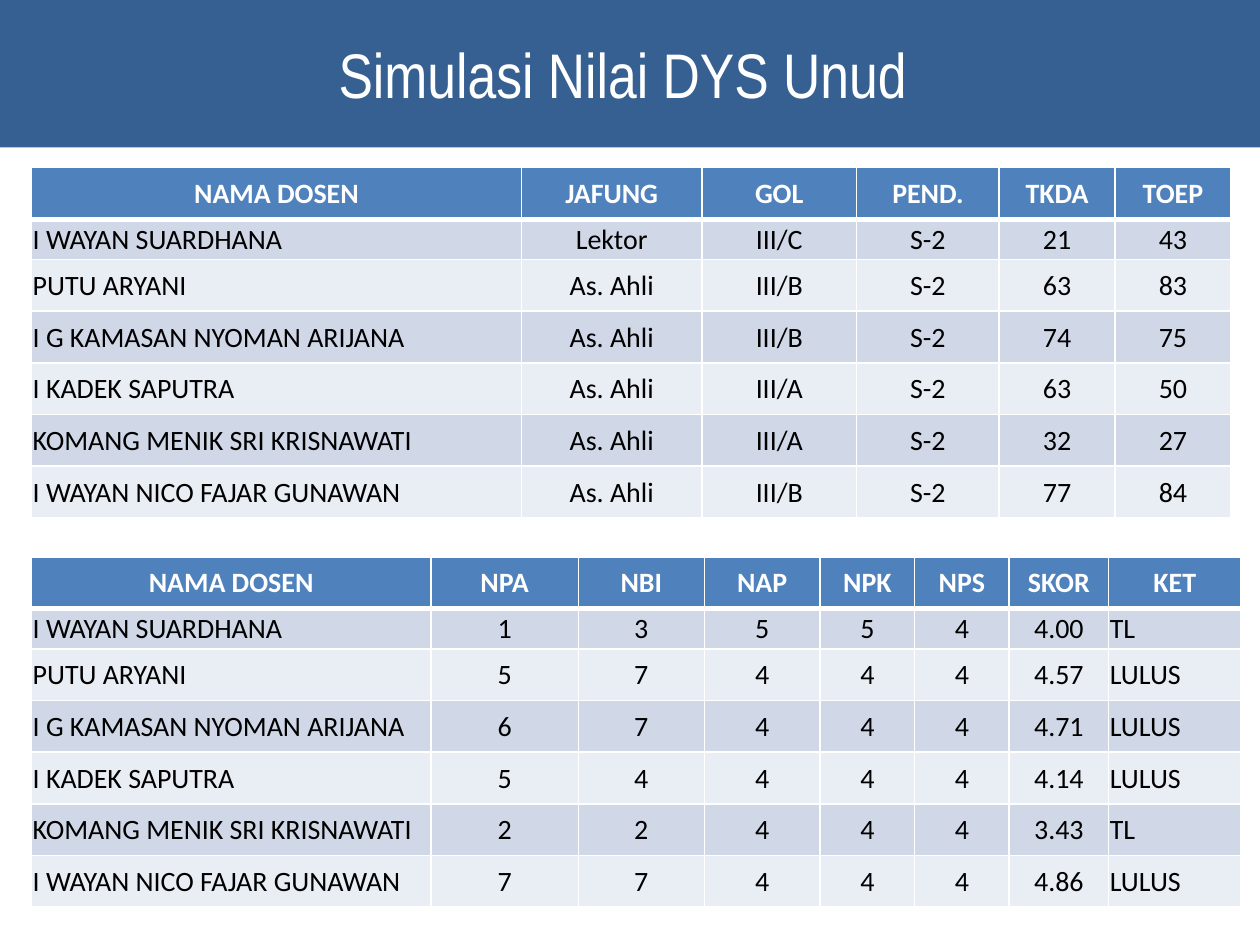
from dataclasses import dataclass

from lxml.etree import SubElement
from pptx import Presentation
from pptx.dml.color import RGBColor as Rgb
from pptx.enum.shapes import MSO_SHAPE as Shape
from pptx.enum.text import MSO_ANCHOR as Anchor, PP_ALIGN as Align
from pptx.oxml.ns import qn
from pptx.util import Inches, Pt

# Content
TITLE = "Simulasi Nilai DYS Unud "
LECTURERS = [
    "I WAYAN SUARDHANA",
    "PUTU ARYANI",
    "I G KAMASAN NYOMAN ARIJANA",
    "I KADEK SAPUTRA",
    "KOMANG MENIK SRI KRISNAWATI",
    "I WAYAN NICO FAJAR GUNAWAN",
]
PROFILE = {
    "top": 1.33,
    "columns": [("NAMA DOSEN", 3.89), ("JAFUNG", 1.43), ("GOL", 1.23),
                ("PEND.", 1.13), ("TKDA", 0.92), ("TOEP", 0.92)],
    "left_aligned": {"NAMA DOSEN"},
    "rows": [
        ("Lektor", "III/C", "S-2", "21", "43"),
        ("As. Ahli", "III/B", "S-2", "63", "83"),
        ("As. Ahli", "III/B", "S-2", "74", "75"),
        ("As. Ahli", "III/A", "S-2", "63", "50"),
        ("As. Ahli", "III/A", "S-2", "32", "27"),
        ("As. Ahli", "III/B", "S-2", "77", "84"),
    ],
}
SCORES = {
    "top": 4.42,
    "columns": [("NAMA DOSEN", 3.17), ("NPA", 1.17), ("NBI", 1), ("NAP", 0.92),
                ("NPK", 0.75), ("NPS", 0.75), ("SKOR", 0.79), ("KET", 1.05)],
    "left_aligned": {"NAMA DOSEN", "KET"},
    "rows": [
        ("1", "3", "5", "5", "4", "4.00", "TL"),
        ("5", "7", "4", "4", "4", "4.57", "LULUS"),
        ("6", "7", "4", "4", "4", "4.71", "LULUS"),
        ("5", "4", "4", "4", "4", "4.14", "LULUS"),
        ("2", "2", "4", "4", "4", "3.43", "TL"),
        ("7", "7", "4", "4", "4", "4.86", "LULUS"),
    ],
}

# Grid, in inches
SLIDE_WIDTH, SLIDE_HEIGHT = 10, 7.5
BANNER_HEIGHT = 1.17
TABLE_LEFT = 0.25
ROW_HEIGHT, FIRST_BODY_HEIGHT = 0.41, 0.32
CELL_MARGIN = 0.01


@dataclass(frozen=True)
class Theme:
    banner: str = "376092"
    header: str = "4F81BD"
    bands: tuple = ("D0D8E8", "E9EDF4")
    light: str = "FFFFFF"
    dark: str = "000000"
    title_font: str = "Arial Narrow"
    table_font: str = "Calibri"
    title_size: int = 36
    table_size: int = 16
    thin_line: int = 1
    header_line: int = 3


THEME = Theme()


def write(text_frame, text, font_name, size, color, align, bold=False):
    text_frame.text = text
    paragraph = text_frame.paragraphs[0]
    paragraph.alignment = align
    font = paragraph.runs[0].font
    font.name, font.size, font.bold = font_name, Pt(size), bold
    font.color.rgb = Rgb.from_string(color)


def add_borders(cell, top, bottom):
    """Draw the four cell edges; must run before the cell is filled."""
    properties = cell._tc.get_or_add_tcPr()
    widths = {"L": THEME.thin_line, "R": THEME.thin_line, "T": top, "B": bottom}
    for side, width in widths.items():
        line = SubElement(properties, qn(f"a:ln{side}"), w=str(Pt(width)))
        fill = SubElement(line, qn("a:solidFill"))
        SubElement(fill, qn("a:srgbClr"), val=THEME.light)


def format_cell(cell, text, row, left_aligned):
    is_header = row == 0
    thin, thick = THEME.thin_line, THEME.header_line
    add_borders(cell, top=thick if row == 1 else thin,
                bottom=thick if is_header else thin)
    cell.fill.solid()
    fill = THEME.header if is_header else THEME.bands[(row - 1) % 2]
    cell.fill.fore_color.rgb = Rgb.from_string(fill)
    cell.vertical_anchor = Anchor.MIDDLE
    cell.margin_left = cell.margin_right = cell.margin_top = Inches(CELL_MARGIN)
    cell.margin_bottom = 0
    write(cell.text_frame, text, THEME.table_font, THEME.table_size,
          THEME.light if is_header else THEME.dark,
          Align.LEFT if left_aligned and not is_header else Align.CENTER,
          bold=is_header)


def add_score_table(slide, data):
    names, widths = zip(*data["columns"])
    rows = [names] + [(lecturer, *values)
                      for lecturer, values in zip(LECTURERS, data["rows"])]
    heights = [ROW_HEIGHT, FIRST_BODY_HEIGHT] + [ROW_HEIGHT] * (len(rows) - 2)
    table = slide.shapes.add_table(
        len(rows), len(names), Inches(TABLE_LEFT), Inches(data["top"]),
        Inches(sum(widths)), Inches(sum(heights))).table
    for column, width in zip(table.columns, widths):
        column.width = Inches(width)
    for row, height in zip(table.rows, heights):
        row.height = Inches(height)
    for row_index, values in enumerate(rows):
        for column_index, (name, text) in enumerate(zip(names, values)):
            format_cell(table.cell(row_index, column_index), text, row_index,
                        name in data["left_aligned"])


def add_banner(slide):
    banner = slide.shapes.add_shape(Shape.RECTANGLE, 0, 0, Inches(SLIDE_WIDTH),
                                    Inches(BANNER_HEIGHT))
    banner.shadow.inherit = False
    banner.fill.solid()
    banner.fill.fore_color.rgb = Rgb.from_string(THEME.banner)
    banner.line.fill.background()
    banner.text_frame.vertical_anchor = Anchor.MIDDLE
    write(banner.text_frame, TITLE, THEME.title_font, THEME.title_size,
          THEME.light, Align.CENTER)


def main():
    presentation = Presentation()
    presentation.slide_width = Inches(SLIDE_WIDTH)
    presentation.slide_height = Inches(SLIDE_HEIGHT)
    slide = presentation.slides.add_slide(presentation.slide_layouts[6])
    add_banner(slide)
    for data in (PROFILE, SCORES):
        add_score_table(slide, data)
    presentation.save("out.pptx")


if __name__ == "__main__":
    main()
